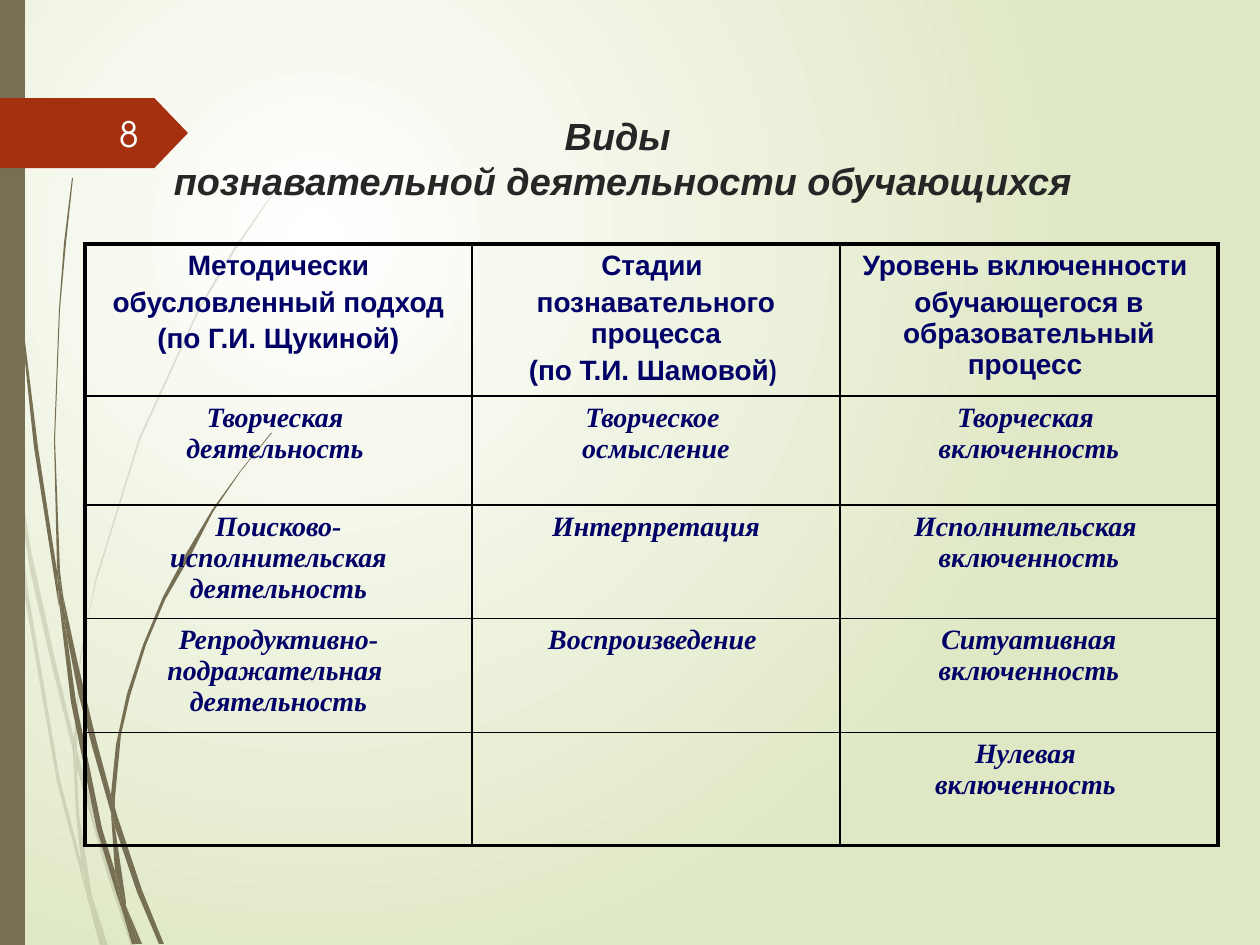
from dataclasses import dataclass

from lxml import etree
from pptx import Presentation
from pptx.dml.color import RGBColor
from pptx.enum.shapes import MSO_SHAPE
from pptx.enum.text import MSO_ANCHOR, PP_ALIGN
from pptx.oxml.ns import qn
from pptx.util import Pt

EMU_PER_PX = 914400 / 126
CENTER, RIGHT = PP_ALIGN.CENTER, PP_ALIGN.RIGHT
TOP, MIDDLE = MSO_ANCHOR.TOP, MSO_ANCHOR.MIDDLE
RECTANGLE, PENTAGON = MSO_SHAPE.RECTANGLE, MSO_SHAPE.PENTAGON

WHITE = RGBColor(0xFF, 0xFF, 0xFF)
PALE_GREEN = RGBColor(0xDF, 0xE8, 0xC4)
OLIVE = RGBColor(0x76, 0x6F, 0x54)
RUST = RGBColor(0xA5, 0x30, 0x10)
CHARCOAL = RGBColor(0x26, 0x26, 0x26)
NUMBER_WHITE = RGBColor(0xFE, 0xFF, 0xFF)
NAVY = RGBColor(0x00, 0x00, 0x66)
BLACK = RGBColor(0x00, 0x00, 0x00)

THIN, THICK = 1, 2.25


@dataclass(frozen=True)
class TextStyle:
    font: str
    size: float
    color: RGBColor
    bold: bool = False
    italic: bool = False


@dataclass(frozen=True)
class Wisp:
    blades: tuple[tuple[tuple[int, int], ...], ...]
    opacity: int = 100


TITLE = TextStyle("Arial", 21.6, CHARCOAL, True, True)
NUMBER = TextStyle("TeX Gyre Adventor", 20, NUMBER_WHITE)
HEADER = TextStyle("Arial", 16, NAVY, True)
HEADER_NARROW = TextStyle("Arial Narrow", 16, NAVY, True)
BODY = TextStyle("Times New Roman", 16, NAVY, True, True)

PALE_WISP = Wisp((
    ((10, 441), (8, 406), (0, 355), (0, 377), (9, 433)),
    ((50, 658), (74, 755), (74, 738), (54, 655), (31, 550), (13, 435), (15, 474), (30, 570)),
    ((81, 765), (77, 751), (77, 769), (107, 874), (131, 946), (136, 946), (111, 872)),
    ((105, 946), (108, 946), (92, 896)),
    ((81, 861), (60, 780), (28, 591), (15, 474), (10, 441), (24, 592), (57, 782),
     (81, 873), (88, 900), (87, 891)),
    ((73, 755), (76, 814), (81, 861), (84, 872), (92, 896), (91, 890), (79, 814),
     (77, 769), (77, 766)),
    ((77, 736), (80, 658), (96, 582), (140, 440), (200, 309), (236, 249), (273, 194),
     (273, 193), (234, 248), (199, 307), (139, 438), (95, 581), (81, 658), (74, 736),
     (74, 738), (77, 751)),
    ((88, 900), (100, 946), (103, 946)),
    ((77, 766), (77, 769), (77, 751), (74, 738), (73, 755)),
    ((84, 872), (82, 861), (87, 891), (88, 900), (103, 946), (105, 946), (92, 896)),
), 20)
DARK_WISP = Wisp((
    ((6, 139), (18, 294), (34, 447), (58, 601), (59, 606), (57, 571), (38, 447),
     (19, 292), (8, 137), (4, 0), (3, 0), (4, 60)),
    ((92, 746), (111, 813), (111, 795), (97, 743), (78, 664), (63, 595), (67, 636), (78, 692)),
    ((118, 818), (115, 808), (115, 827), (137, 892), (159, 944), (164, 944), (142, 890)),
    ((115, 871), (102, 828), (76, 701), (67, 636), (59, 601), (71, 702), (97, 830),
     (116, 892), (122, 910), (121, 903)),
    ((63, 595), (60, 571), (55, 440), (60, 309), (66, 243), (73, 178), (72, 178),
     (64, 243), (59, 309), (54, 440), (57, 566), (62, 595)),
    ((139, 944), (142, 944), (126, 906)),
    ((59, 601), (67, 636), (63, 595), (62, 595), (57, 566), (57, 571)),
    ((115, 798), (121, 735), (130, 696), (146, 645), (165, 600), (191, 555), (213, 512),
     (241, 471), (272, 433), (271, 433), (241, 470), (212, 510), (187, 552), (163, 597),
     (143, 645), (127, 694), (116, 745), (111, 795), (115, 808)),
    ((122, 910), (132, 944), (136, 944)),
    ((111, 813), (115, 871), (121, 890), (126, 906), (126, 902), (115, 827), (113, 820)),
    ((111, 813), (113, 820), (115, 827), (115, 808), (111, 795)),
    ((121, 890), (115, 871), (121, 903), (122, 910), (136, 944), (139, 944), (126, 906)),
))

COLUMN_WIDTHS = (387, 368, 378)
ROW_HEIGHTS = (148, 109, 113, 114, 113)
TABLE_ROWS = (
    (("Методически", "обусловленный подход", "(по Г.И. Щукиной)"),
     ("Стадии ", "познавательного процесса", "(по Т.И. Шамовой|) "),
     ("Уровень включенности ", "обучающегося в образовательный процесс ")),
    (("Творческая ", "деятельность "),
     ("Творческое ", "осмысление"),
     ("Творческая ", "включенность")),
    (("Поисково-", "исполнительская", "деятельность"),
     ("Интерпретация",),
     ("Исполнительская ", "включенность")),
    (("Репродуктивно-подражательная ", "деятельность"),
     ("Воспроизведение ",),
     ("Ситуативная", "включенность")),
    ((), (), ("Нулевая ", "включенность ")),
)


def px(length: int) -> int:
    return round(length * EMU_PER_PX)


def add_run(paragraph, text: str, style: TextStyle) -> None:
    run = paragraph.add_run()
    run.text = text
    run.font.name = style.font
    run.font.size = Pt(style.size)
    run.font.bold = style.bold
    run.font.italic = style.italic
    run.font.color.rgb = style.color


def paint(shape, color: RGBColor, opacity: int = 100) -> None:
    shape.shadow.inherit = False
    shape.fill.solid()
    shape.fill.fore_color.rgb = color
    shape.line.fill.background()
    if opacity < 100:
        color_element = shape._element.spPr.find(f".//{qn('a:srgbClr')}")
        etree.SubElement(color_element, qn("a:alpha"), val=str(opacity * 1000))


def paint_background(slide) -> None:
    fill = slide.background.fill
    fill.gradient()
    for stop, color in zip(fill.gradient_stops, (WHITE, PALE_GREEN)):
        stop.color.rgb = color
    gradient = slide.element.find(f".//{qn('a:gradFill')}")
    gradient.remove(gradient.find(qn("a:lin")))
    circle = etree.SubElement(gradient, qn("a:path"), {"path": "circle"})
    etree.SubElement(circle, qn("a:fillToRect"),
                     l="50000", t="50000", r="100000", b="100000")


def add_wisp(slide, wisp: Wisp) -> None:
    for blade in wisp.blades:
        builder = slide.shapes.build_freeform(*blade[0], scale=EMU_PER_PX)
        builder.add_line_segments(blade[1:], close=True)
        paint(builder.convert_to_shape(), OLIVE, wisp.opacity)


def add_text(slide, box: tuple[int, int, int, int], lines: tuple[str, ...],
             style: TextStyle, alignment, anchor) -> None:
    frame = slide.shapes.add_textbox(*map(px, box)).text_frame
    frame.word_wrap = True
    frame.vertical_anchor = anchor
    paragraph = frame.paragraphs[0]
    paragraph.alignment = alignment
    for index, line in enumerate(lines):
        if index:
            paragraph.add_line_break()
        add_run(paragraph, line, style)


def add_border(cell, side: str, width: float) -> None:
    line = etree.SubElement(cell._tc.get_or_add_tcPr(), qn(f"a:{side}"), w=str(Pt(width)))
    fill = etree.SubElement(line, qn("a:solidFill"))
    etree.SubElement(fill, qn("a:srgbClr"), val=str(BLACK))


def fill_cell(cell, lines: tuple[str, ...], is_header: bool) -> None:
    frame = cell.text_frame
    if is_header:
        cell.margin_bottom = 0
    for index, line in enumerate(lines):
        paragraph = frame.add_paragraph() if index else frame.paragraphs[0]
        paragraph.alignment = CENTER
        if is_header and index:
            paragraph.space_before = Pt(3.2)
        styles = (HEADER, HEADER_NARROW) if is_header else (BODY,)
        for text, style in zip(line.split("|"), styles):
            add_run(paragraph, text, style)


def add_activity_table(slide) -> None:
    last_row, last_column = len(ROW_HEIGHTS) - 1, len(COLUMN_WIDTHS) - 1
    table = slide.shapes.add_table(
        len(ROW_HEIGHTS), len(COLUMN_WIDTHS), px(85), px(244),
        px(sum(COLUMN_WIDTHS)), px(sum(ROW_HEIGHTS))).table
    table.first_row = table.horz_banding = False
    for column, width in zip(table.columns, COLUMN_WIDTHS):
        column.width = px(width)
    for row_index, (row, height) in enumerate(zip(table.rows, ROW_HEIGHTS)):
        row.height = px(height)
        for column_index, cell in enumerate(row.cells):
            outer_sides = {"lnL": column_index == 0, "lnR": column_index == last_column,
                           "lnT": row_index == 0, "lnB": row_index == last_row}
            for side, is_outer in outer_sides.items():
                add_border(cell, side, THICK if is_outer else THIN)
            cell.fill.background()
            fill_cell(cell, TABLE_ROWS[row_index][column_index], row_index == 0)


def main() -> None:
    presentation = Presentation()
    presentation.slide_width, presentation.slide_height = px(1260), px(945)
    slide = presentation.slides.add_slide(presentation.slide_layouts[6])
    paint_background(slide)
    for wisp in (PALE_WISP, DARK_WISP):
        add_wisp(slide, wisp)
    paint(slide.shapes.add_shape(RECTANGLE, 0, 0, px(25), px(945)), OLIVE)
    number_tag = slide.shapes.add_shape(PENTAGON, 0, px(98), px(188), px(70))
    number_tag.adjustments[0] = 0.48
    paint(number_tag, RUST)
    add_text(slide, (150, 106, 946, 69),
             ("Виды ", "познавательной деятельности обучающихся"), TITLE, CENTER, TOP)
    add_text(slide, (70, 109, 81, 50), ("8",), NUMBER, RIGHT, MIDDLE)
    add_activity_table(slide)
    presentation.save("out.pptx")


if __name__ == "__main__":
    main()
